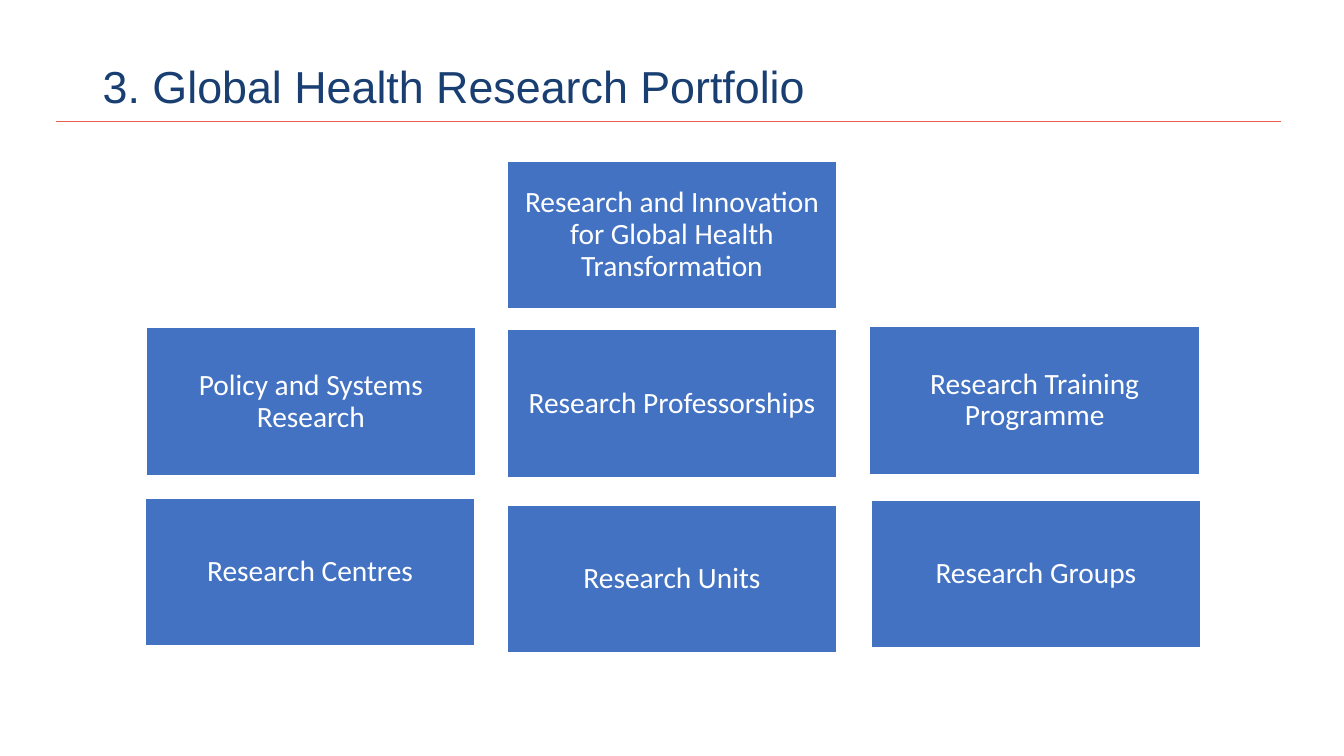
from dataclasses import dataclass

from lxml import etree
from pptx import Presentation
from pptx import util as u
from pptx.dml.color import RGBColor
from pptx.enum import shapes, text
from pptx.oxml.ns import qn

NAVY, BLUE, CORAL, WHITE = "193E72", "4372C3", "EA5D4E", "FFFFFF"
CARD_WIDTH, CARD_HEIGHT = 8.31, 3.73


@dataclass
class Programme:
    name: str
    left: float
    top: float


# Each card sits slightly off a strict grid
PROGRAMMES = [
    Programme("Research and Innovation for Global Health Transformation", 12.78, 4.06),
    Programme("Policy and Systems Research", 3.68, 8.26),
    Programme("Research Professorships", 12.78, 8.31),
    Programme("Research Training Programme", 21.92, 8.23),
    Programme("Research Centres", 3.66, 12.55),
    Programme("Research Units", 12.78, 12.73),
    Programme("Research Groups", 21.95, 12.6),
]


def colour(value: str) -> RGBColor:
    return RGBColor.from_string(value)


def write(frame, wording: str, font: str, size: float, ink: str,
          align, inset_x: float, inset_y: float) -> None:
    frame.word_wrap = True
    frame.vertical_anchor = text.MSO_ANCHOR.MIDDLE
    frame.margin_left = frame.margin_right = u.Cm(inset_x)
    frame.margin_top = frame.margin_bottom = u.Cm(inset_y)
    paragraph = frame.paragraphs[0]
    paragraph.alignment = align
    paragraph.line_spacing = 0.9
    run = paragraph.add_run()
    run.text = wording
    run.font.name = font
    run.font.size = u.Pt(size)
    run.font.color.rgb = colour(ink)


def draw_title(slide, wording: str) -> None:
    title = slide.shapes.add_textbox(u.Cm(2.34), u.Cm(1.02), u.Cm(29.21), u.Cm(2.44))
    write(title.text_frame, wording, "Arial", 32, NAVY, text.PP_ALIGN.LEFT, 0.25, 0.13)


def draw_programme(slide, programme: Programme) -> None:
    card = slide.shapes.add_shape(
        shapes.MSO_SHAPE.RECTANGLE, u.Cm(programme.left), u.Cm(programme.top),
        u.Cm(CARD_WIDTH), u.Cm(CARD_HEIGHT))
    card.shadow.inherit = False
    card.fill.solid()
    card.fill.fore_color.rgb = colour(BLUE)
    card.line.color.rgb = colour(WHITE)
    card.line.width = u.Pt(1)
    write(card.text_frame, programme.name, "Calibri", 21, WHITE,
          text.PP_ALIGN.CENTER, 0.23, 0.23)


def draw_title_rule(slide) -> None:
    rule = slide.shapes.add_connector(
        shapes.MSO_CONNECTOR.STRAIGHT, u.Cm(1.4), u.Cm(3.07), u.Cm(32.28), u.Cm(3.07))
    rule.line.color.rgb = colour(CORAL)
    rule.line.width = u.Pt(0.75)
    etree.SubElement(rule._element.spPr, qn("a:effectLst"))


def main() -> None:
    deck = Presentation()
    deck.slide_width, deck.slide_height = u.Cm(33.87), u.Cm(19.05)
    slide = deck.slides.add_slide(deck.slide_layouts[6])

    # Heading
    draw_title(slide, "3. Global Health Research Portfolio")

    # Portfolio cards
    for programme in PROGRAMMES:
        draw_programme(slide, programme)

    # Line under the heading
    draw_title_rule(slide)
    deck.save("out.pptx")


if __name__ == "__main__":
    main()
